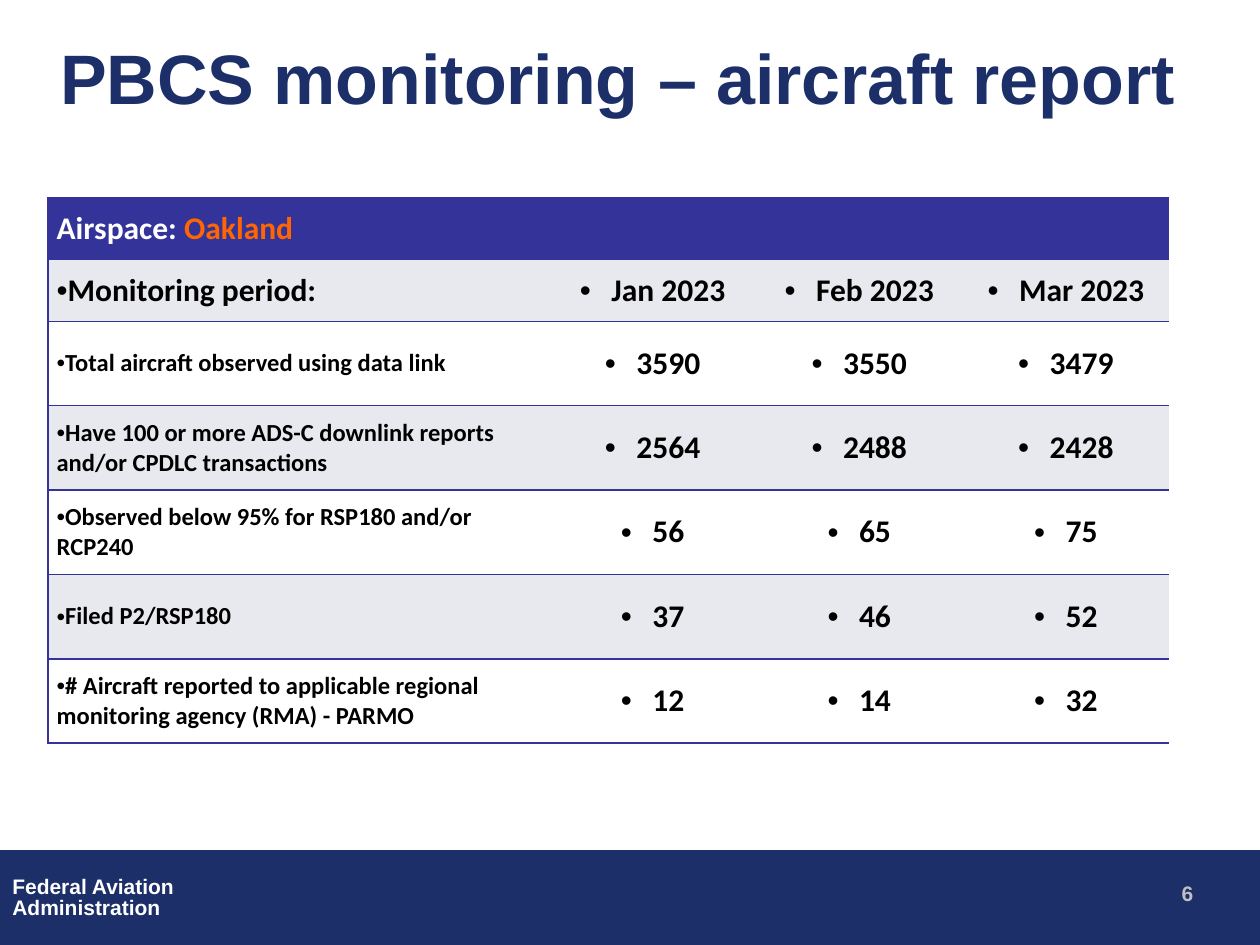
from lxml.etree import SubElement
from pptx import Presentation
from pptx.dml.color import RGBColor
from pptx.enum.shapes import MSO_SHAPE as Shape
from pptx.enum.text import MSO_ANCHOR as Anchor, PP_ALIGN as Align
from pptx.oxml.ns import qn
from pptx.util import Inches, Pt

NAVY, INDIGO, BAND, WHITE = "1D2F68", "333399", "E8E8EF", "FFFFFF"
COLUMNS = [3.98, 1.64, 1.64, 1.64]
ROW_HEIGHTS = [0.49] * 2 + [0.67] * 5
REPORT = [
    ("Monitoring period:", "Jan 2023", "Feb 2023", "Mar 2023"),
    ("Total aircraft observed using data link", "3590", "3550", "3479"),
    ("Have 100 or more ADS-C downlink reports and/or CPDLC transactions",
     "2564", "2488", "2428"),
    ("Observed below 95% for RSP180 and/or RCP240", "56", "65", "75"),
    ("Filed P2/RSP180", "37", "46", "52"),
    ("# Aircraft reported to applicable regional monitoring agency (RMA) - PARMO",
     "12", "14", "32"),
]


def rgb(hex_color):
    return RGBColor.from_string(hex_color)


def style(run, size, color, font="Arial"):
    run.font.size = Pt(size)
    run.font.name = font
    run.font.bold = True
    run.font.color.rgb = rgb(color)


def add_label(slide, box, lines, size, color, wrap=True, spacing=1.0):
    frame = slide.shapes.add_textbox(*map(Inches, box)).text_frame
    frame.word_wrap = wrap
    frame.vertical_anchor = Anchor.MIDDLE
    frame.text = "\n".join(lines)
    for paragraph in frame.paragraphs:
        paragraph.line_spacing = spacing
        style(paragraph.runs[0], size, color)


def add_footer(slide, width, height):
    band = slide.shapes.add_shape(
        Shape.RECTANGLE, 0, int(height * 0.9), width, int(height * 0.1))
    band.shadow.inherit = False
    band.fill.solid()
    band.fill.fore_color.rgb = rgb(NAVY)
    band.line.color.rgb = rgb(NAVY)
    band.line.width = Pt(0.75)
    add_label(slide, (0, 6.91, 1.5, 0.44), ["Federal Aviation", "Administration"],
              12, WHITE, wrap=False, spacing=0.85)
    add_label(slide, (9.28, 6.94, 0.6, 0.3), ["6"], 12, "C0C0C0")


def add_bullet(paragraph, indent):
    """Put a round bullet before the paragraph, hanging by indent inches."""
    properties = paragraph._p.get_or_add_pPr()
    properties.set("marL", str(Inches(indent)))
    properties.set("indent", str(-Inches(indent)))
    SubElement(properties, qn("a:buFont"), typeface="Arial")
    SubElement(properties, qn("a:buChar"), char="•")


def set_borders(cell, drawn):
    """Rule the sides named in drawn and leave the others without a line."""
    properties = cell._tc.get_or_add_tcPr()
    for position, side in enumerate(("L", "R", "T", "B")):
        line = properties.makeelement(qn(f"a:ln{side}"), {"w": str(Pt(1))})
        properties.insert(position, line)
        if side in drawn:
            fill = SubElement(line, qn("a:solidFill"))
            SubElement(fill, qn("a:srgbClr"), val=INDIGO)
        else:
            SubElement(line, qn("a:noFill"))


def format_cell(cell, fill, borders):
    cell.fill.solid()
    cell.fill.fore_color.rgb = rgb(fill)
    cell.vertical_anchor = Anchor.MIDDLE
    cell.margin_left = cell.margin_right = Inches(0.07)
    cell.margin_top = cell.margin_bottom = 0
    set_borders(cell, borders)


def fill_heading(table):
    for cell in table.rows[0].cells:
        format_cell(cell, INDIGO, "LTB")
    heading = table.cell(0, 0)
    heading.merge(table.cell(0, len(COLUMNS) - 1))
    paragraph = heading.text_frame.paragraphs[0]
    for text, color in (("Airspace: ", WHITE), ("Oakland", "FF6600")):
        run = paragraph.add_run()
        run.text = text
        style(run, 18, color, "Calibri")


def add_report(slide):
    table = slide.shapes.add_table(
        len(ROW_HEIGHTS), len(COLUMNS), Inches(0.38), Inches(1.57),
        Inches(sum(COLUMNS)), Inches(sum(ROW_HEIGHTS))).table
    for column, width in zip(table.columns, COLUMNS):
        column.width = Inches(width)
    for row, height in zip(table.rows, ROW_HEIGHTS):
        row.height = Inches(height)
    fill_heading(table)
    for r, entries in enumerate(REPORT, start=1):
        for c, entry in enumerate(entries):
            cell = table.cell(r, c)
            format_cell(cell, BAND if r % 2 else WHITE, "TB" if c else "LTB")
            paragraph = cell.text_frame.paragraphs[0]
            paragraph.text = entry
            paragraph.alignment = Align.CENTER if c else Align.LEFT
            add_bullet(paragraph, 0.25 if c else 0)
            is_measure = c == 0 and r > 1
            style(paragraph.runs[0], 14 if is_measure else 18, "000000", "Calibri")


def main():
    deck = Presentation()
    deck.slide_width, deck.slide_height = Inches(10), Inches(7.5)
    slide = deck.slides.add_slide(deck.slide_layouts[6])
    add_footer(slide, deck.slide_width, deck.slide_height)
    add_label(slide, (0.38, 0.27, 9.27, 0.67),
              ["PBCS monitoring – aircraft report"], 40, NAVY)
    add_report(slide)
    deck.save("out.pptx")


if __name__ == "__main__":
    main()
